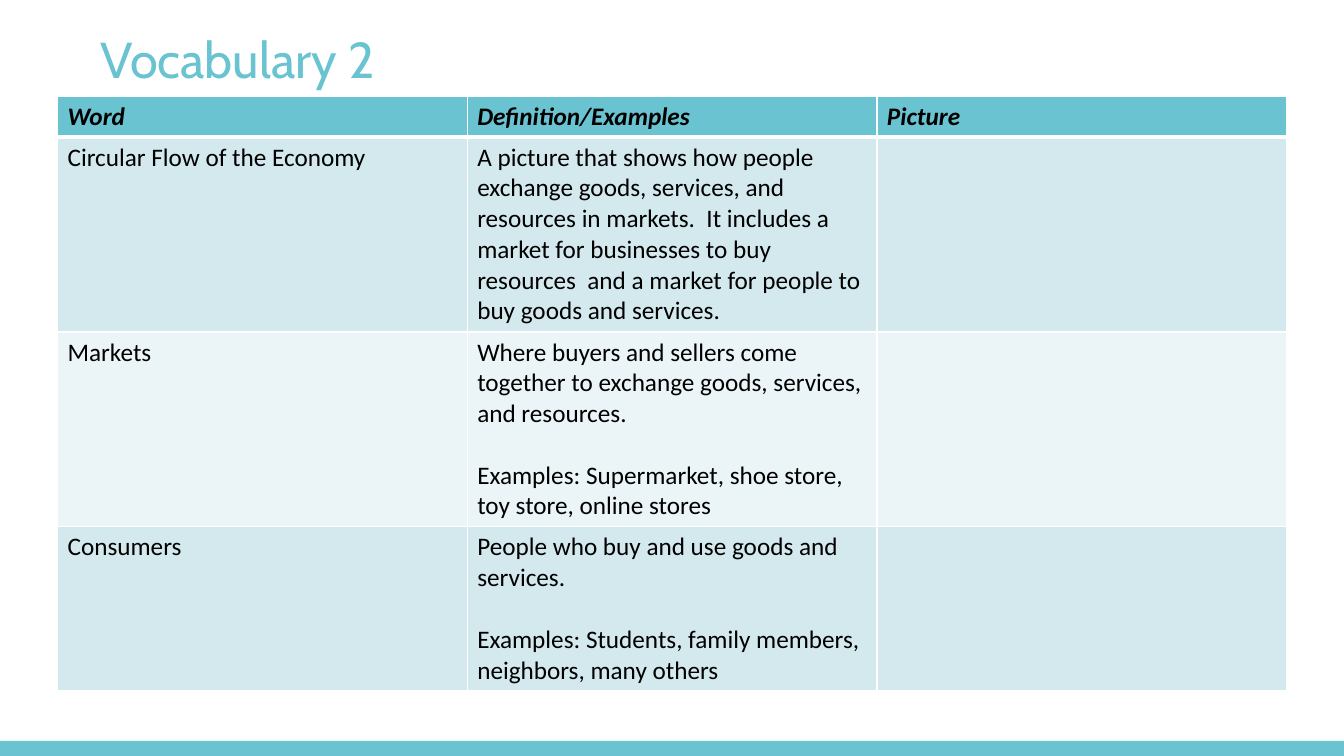
from lxml.etree import SubElement
from pptx import Presentation
from pptx.dml.color import RGBColor
from pptx.enum.shapes import MSO_SHAPE as Preset
from pptx.enum.text import MSO_ANCHOR as Anchor
from pptx.oxml.ns import qn
from pptx.util import Inches, Pt

COLORS = {
    "teal": "69C3D1",
    "band": "D4E9EE",
    "pale": "EBF5F7",
    "white": "FFFFFF",
    "black": "000000",
}
TITLE = {"name": "Cabin", "size": Pt(36), "bold": False}
HEADER = {"name": "Calibri", "size": Pt(18), "bold": True, "italic": True}
BODY = {"name": "Calibri", "size": Pt(18), "bold": False, "italic": False}
EXAMPLES_GAP = Pt(22)
GRID = 100

ROWS = [
    (["Word"], ["Definition/Examples"], ["Picture"]),
    (
        ["Circular Flow of the Economy"],
        ["A picture that shows how people exchange goods, services, and resources "
         "in markets.  It includes a market for businesses to buy resources  and a "
         "market for people to buy goods and services."],
        [],
    ),
    (
        ["Markets"],
        ["Where buyers and sellers come together to exchange goods, services, and resources.",
         "Examples: Supermarket, shoe store, toy store, online stores"],
        [],
    ),
    (
        ["Consumers"],
        ["People who buy and use goods and services.",
         "Examples: Students, family members, neighbors, many others"],
        [],
    ),
]
ROW_FILLS = ["teal", "band", "pale", "band"]
ROW_HEIGHTS = [5.33, 25.78, 25.78, 21.7]


class SlideBuilder:
    def __init__(self, presentation):
        self.slide = presentation.slides.add_slide(presentation.slide_layouts[6])
        self.column = presentation.slide_width / GRID
        self.row = presentation.slide_height / GRID

    def place(self, left, top, width, height):
        return [
            round(left * self.column),
            round(top * self.row),
            round(width * self.column),
            round(height * self.row),
        ]

    def color(self, name):
        return RGBColor.from_string(COLORS[name])

    def paint(self, item, name):
        item.fill.solid()
        item.fill.fore_color.rgb = self.color(name)

    def add_texts(self, frame, texts, style, color):
        for index, text in enumerate(texts):
            paragraph = frame.add_paragraph() if index else frame.paragraphs[0]
            if index:
                paragraph.space_before = EXAMPLES_GAP
            paragraph.text = text
            for name, value in style.items():
                setattr(paragraph.font, name, value)
            paragraph.font.color.rgb = self.color(color)

    def bar(self, place, color):
        shape = self.slide.shapes.add_shape(Preset.RECTANGLE, *self.place(*place))
        shape.shadow.inherit = False
        self.paint(shape, color)
        shape.line.fill.background()

    def title(self, place, text):
        frame = self.slide.shapes.add_textbox(*self.place(*place)).text_frame
        frame.word_wrap = True
        frame.vertical_anchor = Anchor.MIDDLE
        self.add_texts(frame, [text], TITLE, "teal")
        frame.paragraphs[0].line_spacing = 0.9

    def border(self, cell, bottom):
        properties = cell._tc.get_or_add_tcPr()
        for side, points in {"L": 1, "R": 1, "T": 1, "B": bottom}.items():
            line = SubElement(properties, qn(f"a:ln{side}"), w=str(Pt(points)))
            fill = SubElement(line, qn("a:solidFill"))
            SubElement(fill, qn("a:srgbClr"), val=COLORS["white"])

    def table(self, left, top, width, rows, heights, fills):
        place = self.place(left, top, width, sum(heights))
        table = self.slide.shapes.add_table(len(rows), len(rows[0]), *place).table
        table.horz_banding = False
        for index, (texts, height, fill) in enumerate(zip(rows, heights, fills)):
            table.rows[index].height = round(height * self.row)
            for cell, paragraphs in zip(table.rows[index].cells, texts):
                self.border(cell, 1 if index else 3)
                self.paint(cell, fill)
                self.add_texts(cell.text_frame, paragraphs, BODY if index else HEADER, "black")


def main():
    presentation = Presentation()
    presentation.slide_width = Inches(13.33)
    presentation.slide_height = Inches(7.5)
    builder = SlideBuilder(presentation)
    builder.bar((0, 98, 100, 2), "teal")
    builder.title((6.75, 3.87, 86.27, 8.8), "Vocabulary 2")
    builder.table(4.28, 12.8, 91.45, ROWS, ROW_HEIGHTS, ROW_FILLS)
    presentation.save("out.pptx")


if __name__ == "__main__":
    main()
